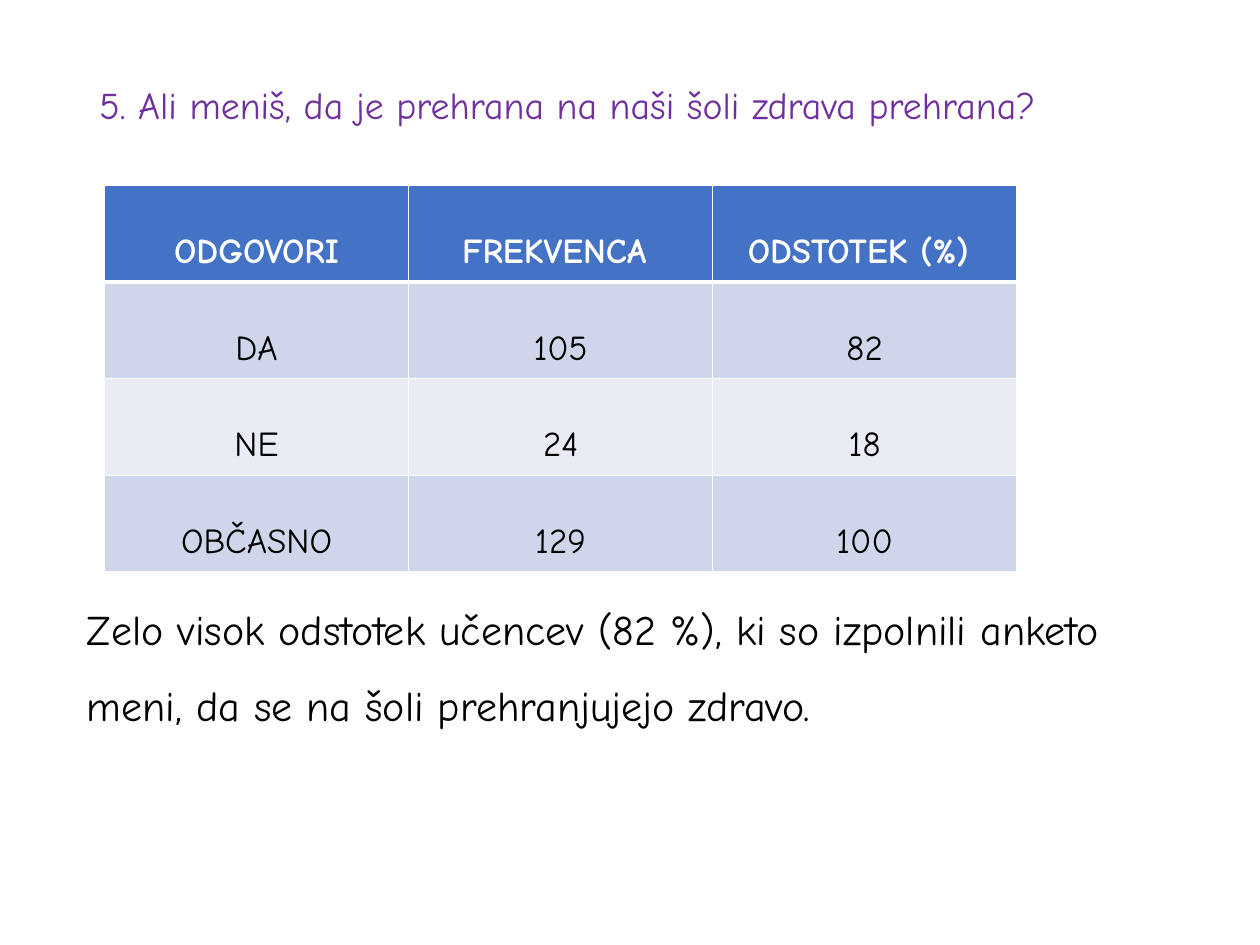
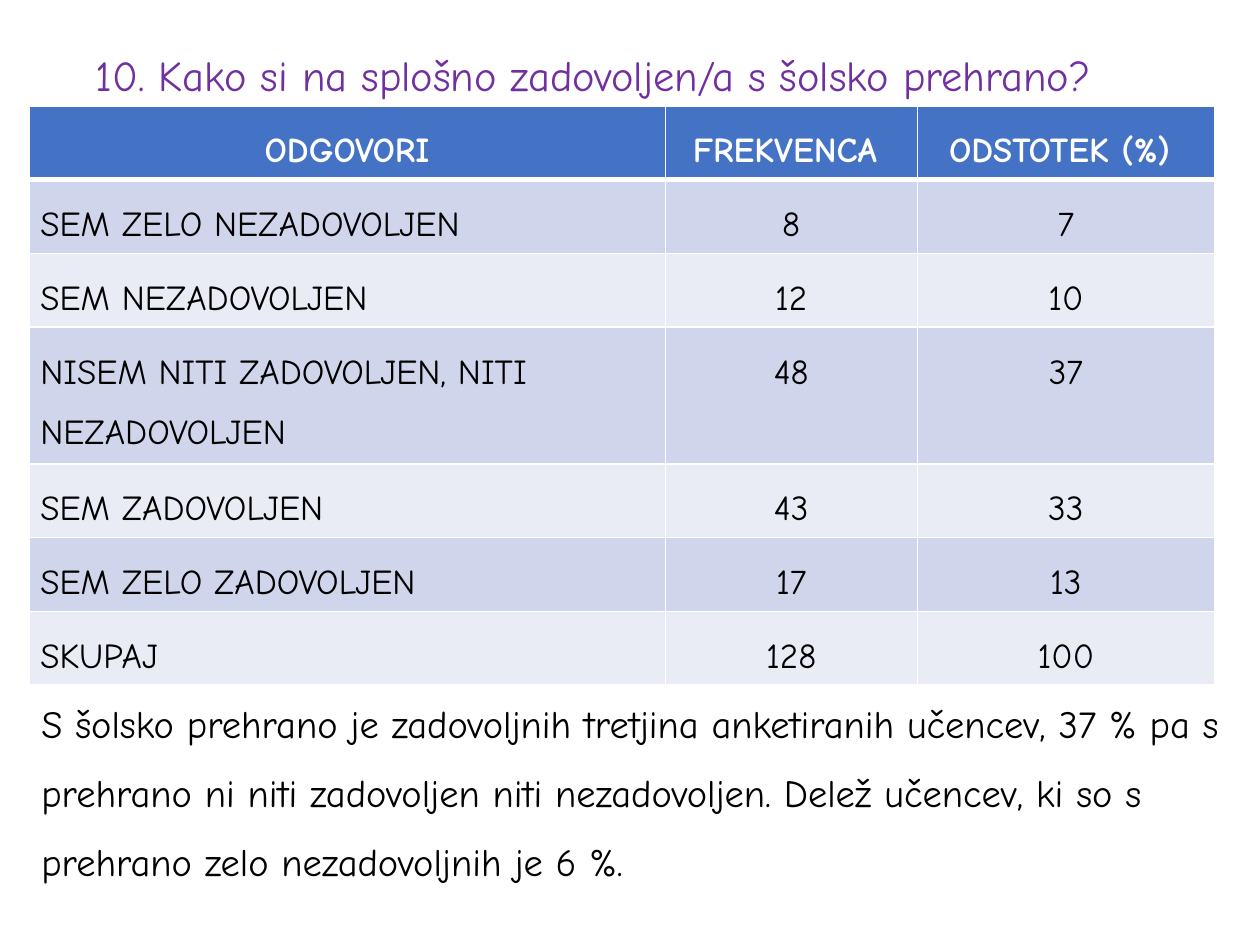
from dataclasses import dataclass

from lxml import etree
from pptx import Presentation
from pptx.dml.color import RGBColor
from pptx.enum.text import MSO_ANCHOR, PP_ALIGN
from pptx.oxml.ns import qn
from pptx.slide import Slide
from pptx.table import _Cell
from pptx.text.text import _Paragraph
from pptx.util import Inches, Pt

LEFT, CENTER = PP_ALIGN.LEFT, PP_ALIGN.CENTER
TOP = MSO_ANCHOR.TOP
SLIDE_W, SLIDE_H = Inches(10), Inches(7.5)
FONT = "Comic Neue"
TABLE_SIZE = 20
COLORS = {
    "question": "7030A0",
    "text": "000000",
    "header": "4472C4",
    "odd_row": "CFD5EA",
    "even_row": "E9EBF5",
    "white": "FFFFFF",
}
HEADINGS = ("ODGOVORI", "FREKVENCA ", "ODSTOTEK (%) ")


@dataclass(frozen=True)
class Box:
    """Position and size in percent of the slide."""
    x: float
    y: float
    w: float
    h: float

    def emu(self) -> tuple[int, int, int, int]:
        return across(self.x), down(self.y), across(self.w), down(self.h)


@dataclass(frozen=True)
class Caption:
    text: str
    box: Box
    size: float
    color: str = "text"
    top_inset: float = 0.67


@dataclass(frozen=True)
class Answers:
    x: float
    y: float
    columns: tuple[float, ...]
    row: float
    rows: tuple[tuple[str, int, int], ...]
    label_align: PP_ALIGN
    line_spacing: float
    space_after: float = 0
    tall_rows: tuple[int, ...] = ()
    tall: float = 0
    side_inset: float = 1
    edge_inset: float = 0.67


@dataclass(frozen=True)
class SurveySlide:
    question: Caption
    finding: Caption
    answers: Answers


SURVEY = (
    SurveySlide(
        Caption("5. Ali meniš, da je prehrana na naši šoli zdrava prehrana?",
                Box(6.9, 5.33, 90.4, 8.93), 21.6, "question", 0.9),
        Caption("Zelo visok odstotek učencev (82 %), ki so izpolnili anketo "
                "meni, da se na šoli prehranjujejo zdravo.",
                Box(5.9, 60.53, 88.2, 16.67), 24),
        Answers(8.3, 19.6, (24.13,) * 3, 10.2,
                (("DA", 105, 82), ("NE", 24, 18), ("OBČASNO", 129, 100)),
                CENTER, 2),
    ),
    SurveySlide(
        Caption("10. Kako si na splošno zadovoljen/a s šolsko prehrano?",
                Box(6.6, 1.33, 86.2, 7.87), 24.3, "question", 1.2),
        Caption("S šolsko prehrano je zadovoljnih tretjina anketiranih učencev, "
                "37 % pa s prehrano ni niti zadovoljen niti nezadovoljen. "
                "Delež učencev, ki so s prehrano zelo nezadovoljnih je 6 %.",
                Box(2.3, 70.93, 97.7, 22.8), 22),
        Answers(2.3, 11.2, (50.5, 20, 23.6), 7.8,
                (("SEM ZELO NEZADOVOLJEN", 8, 7),
                 ("SEM NEZADOVOLJEN", 12, 10),
                 ("NISEM NITI ZADOVOLJEN, NITI NEZADOVOLJEN", 48, 37),
                 ("SEM ZADOVOLJEN", 43, 33),
                 ("SEM ZELO ZADOVOLJEN", 17, 13),
                 ("SKUPAJ", 128, 100)),
                LEFT, 1.5, 8, (3,), 14.4, 0.9, 0.57),
    ),
)


def across(percent: float) -> int:
    return round(SLIDE_W * percent / 100)


def down(percent: float) -> int:
    return round(SLIDE_H * percent / 100)


def write(paragraph: _Paragraph, text: str, size: float, color: str,
          spacing: float, bold: bool = False) -> None:
    paragraph.line_spacing = float(spacing)
    run = paragraph.add_run()
    run.text = text
    run.font.name = FONT
    run.font.size = Pt(size)
    run.font.bold = bold
    run.font.color.rgb = RGBColor.from_string(COLORS[color])


def draw_caption(slide: Slide, caption: Caption) -> None:
    frame = slide.shapes.add_textbox(*caption.box.emu()).text_frame
    frame.word_wrap = True
    frame.vertical_anchor = TOP
    frame.margin_top = down(caption.top_inset)
    write(frame.paragraphs[0], caption.text, caption.size, caption.color, 1.5)


def draw_borders(cell: _Cell, top: float, bottom: float) -> None:
    properties = cell._tc.get_or_add_tcPr()
    widths = {"a:lnL": 1, "a:lnR": 1, "a:lnT": top, "a:lnB": bottom}
    for index, (tag, width) in enumerate(widths.items()):
        line = etree.Element(qn(tag), w=str(Pt(width)))
        fill = etree.SubElement(line, qn("a:solidFill"))
        etree.SubElement(fill, qn("a:srgbClr"), val=COLORS["white"])
        properties.insert(index, line)


def draw_answers(slide: Slide, answers: Answers) -> None:
    rows = (HEADINGS, *answers.rows)
    heights = [answers.tall if i in answers.tall_rows else answers.row
               for i in range(len(rows))]
    box = Box(answers.x, answers.y, sum(answers.columns), sum(heights))
    table = slide.shapes.add_table(len(rows), len(HEADINGS), *box.emu()).table
    for column, width in zip(table.columns, answers.columns):
        column.width = across(width)
    for r, (values, height) in enumerate(zip(rows, heights)):
        table.rows[r].height = down(height)
        is_header = r == 0
        band = "header" if is_header else "odd_row" if r % 2 else "even_row"
        for c, value in enumerate(values):
            cell = table.cell(r, c)
            cell.margin_left = cell.margin_right = across(answers.side_inset)
            cell.margin_top = cell.margin_bottom = down(answers.edge_inset)
            cell.fill.solid()
            cell.fill.fore_color.rgb = RGBColor.from_string(COLORS[band])
            draw_borders(cell, 3 if r == 1 else 1, 3 if is_header else 1)
            paragraph = cell.text_frame.paragraphs[0]
            is_label = c == 0 and not is_header
            paragraph.alignment = answers.label_align if is_label else CENTER
            paragraph.space_after = Pt(answers.space_after)
            write(paragraph, str(value), TABLE_SIZE,
                  "white" if is_header else "text",
                  answers.line_spacing, is_header)


def main() -> None:
    deck = Presentation()
    deck.slide_width, deck.slide_height = SLIDE_W, SLIDE_H
    blank = deck.slide_layouts[6]
    for part in SURVEY:
        slide = deck.slides.add_slide(blank)
        draw_caption(slide, part.question)
        draw_caption(slide, part.finding)
        draw_answers(slide, part.answers)
    deck.save("out.pptx")


if __name__ == "__main__":
    main()
